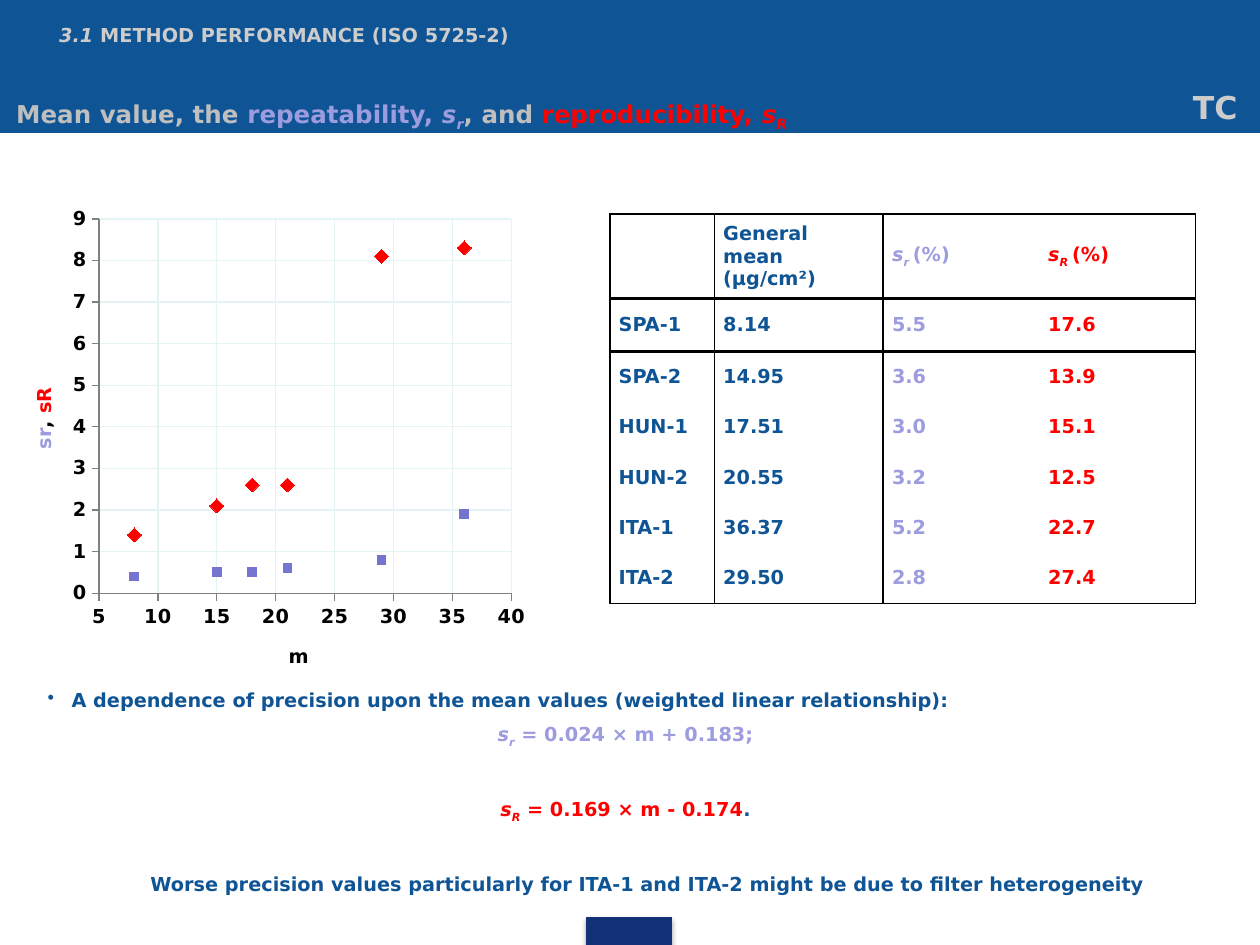
import pptx
import pptx.chart.data
import pptx.dml.color
import pptx.enum.chart
import pptx.enum.shapes
import pptx.enum.text
import pptx.oxml
import pptx.oxml.ns
import pptx.util

RGB = pptx.dml.color.RGBColor
BLUE = RGB(0x0F, 0x54, 0x94)
NAVY = RGB(0x13, 0x31, 0x76)
LILAC = RGB(0x9C, 0x9C, 0xDF)
VIOLET = RGB(0x75, 0x75, 0xD1)
RED = RGB(0xFF, 0, 0)
BLACK = RGB(0, 0, 0)
GRAY = RGB(0x80, 0x80, 0x80)
SILVER = RGB(0xBF, 0xBF, 0xBF)
PALE = RGB(0xCC, 0xCC, 0xCC)
MINT = RGB(0xE4, 0xF3, 0xF4)
FONT = "DejaVu Sans"
Pt = pptx.util.Pt
NS = pptx.oxml.ns.nsdecls
ALIGN = pptx.enum.text.PP_ALIGN
ANCHOR = pptx.enum.text.MSO_ANCHOR
RECT = pptx.enum.shapes.MSO_SHAPE.RECTANGLE

deck = pptx.Presentation()
deck.slide_width = pptx.util.Inches(10)
deck.slide_height = pptx.util.Inches(7.5)
COL = deck.slide_width / 100
ROW = deck.slide_height / 75


def span(col, row, wide, high):
    """Turn a place on the 100 by 75 grid into left, top, width, height."""
    return [round(n * unit) for n, unit in zip((col, row, wide, high), (COL, ROW) * 2)]


def write(par, size, *runs):
    """Fill a paragraph with (text, colour, style); style is "", "i" or "sub"."""
    par.font.name, par.font.size, par.font.bold = FONT, Pt(size), True
    for text, color, style in runs:
        run = par.add_run()
        run.text = text
        font = run.font
        font.name, font.size, font.bold = FONT, Pt(size), True
        font.color.rgb = color
        font.italic = style != ""
        if style == "sub":
            font._element.set("baseline", "-25000")


slide = deck.slides.add_slide(deck.slide_layouts[5])
shapes = slide.shapes

# Header band and footer block
band = shapes.add_shape(RECT, *span(0, 0, 100, 10.5))
foot = shapes.add_shape(RECT, *span(46.6, 72.8, 6.7, 2.2))
for shape, color in ((band, BLUE), (foot, NAVY)):
    shape.fill.solid()
    shape.fill.fore_color.rgb = color
    shape.line.color.rgb = color
    shape.line.width = Pt(0.75)
band.shadow.inherit = False
shapes._spTree.insert(2, band._element)

# Title
title = shapes.title
title.left, title.top, title.width, title.height = span(0, 0, 89.8, 5.6)
frame = title.text_frame
frame.margin_left = round(4.7 * COL)
frame.vertical_anchor = ANCHOR.MIDDLE
frame.paragraphs[0].alignment = ALIGN.LEFT
write(frame.paragraphs[0], 11, ("3.1 ", PALE, "i"),
      ("METHOD PERFORMANCE (ISO 5725-2)", PALE, ""))

# Subtitle bar and tag
bar = shapes.add_shape(RECT, *span(0.3, 6, 89.9, 4.5))
bar.shadow.inherit = False
bar.fill.solid()
bar.fill.fore_color.rgb = BLUE
bar.line.fill.background()
frame = bar.text_frame
frame.word_wrap = True
frame.margin_bottom = 0
frame.vertical_anchor = ANCHOR.BOTTOM
frame.paragraphs[0].alignment = ALIGN.LEFT
write(frame.paragraphs[0], 14, ("Mean value, the ", SILVER, ""),
      ("repeatability, ", LILAC, ""), ("s", LILAC, "i"), ("r", LILAC, "sub"),
      (", and ", SILVER, ""), ("reproducibility, ", RED, ""),
      ("s", RED, "i"), ("R", RED, "sub"))

tag = shapes.add_textbox(*span(93.7, 6.5, 5.6, 4))
tag.text_frame.word_wrap = False
write(tag.text_frame.paragraphs[0], 18, ("TC", PALE, ""))

# Scatter chart
mean = (8, 15, 18, 21, 36, 29)
marks = pptx.enum.chart.XL_MARKER_STYLE
sets = (("Series 1", (1.4, 2.1, 2.6, 2.6, 8.3, 8.1), marks.DIAMOND, 8, RED),
        ("Series 2", (0.4, 0.5, 0.5, 0.6, 1.9, 0.8), marks.SQUARE, 5, VIOLET))
data = pptx.chart.data.XyChartData()
for name, vals, *rest in sets:
    line = data.add_series(name)
    for x, y in zip(mean, vals):
        line.add_data_point(x, y)
chart = shapes.add_chart(pptx.enum.chart.XL_CHART_TYPE.XY_SCATTER,
                         *span(1.8, 16.2, 40.4, 39.1), data).chart
chart.has_title = chart.has_legend = False
chart.font.name, chart.font.size, chart.font.bold = FONT, Pt(11), True
chart.font.color.rgb = BLACK
chart.plots[0].vary_by_categories = False
for line, (name, vals, mark, size, color) in zip(chart.plots[0].series, sets):
    line.smooth = False
    line.format.line.fill.background()
    line.marker.style, line.marker.size = mark, size
    line.marker.format.fill.solid()
    line.marker.format.fill.fore_color.rgb = color
    line.marker.format.line.color.rgb = color
axes = ((chart.category_axis, 5, 40, 5, [("m", BLACK, "")]),
        (chart.value_axis, 0, 9, 1,
         [("sr", LILAC, ""), (", ", BLACK, ""), ("sR", RED, "")]))
for axis, low, high, step, label in axes:
    axis.minimum_scale, axis.maximum_scale, axis.major_unit = low, high, step
    axis.major_tick_mark = pptx.enum.chart.XL_TICK_MARK.OUTSIDE
    axis.minor_tick_mark = pptx.enum.chart.XL_TICK_MARK.NONE
    axis.tick_labels.number_format = "0"
    axis.tick_labels.number_format_is_linked = False
    axis.format.line.color.rgb = GRAY
    axis.has_major_gridlines = True
    axis.major_gridlines.format.line.color.rgb = MINT
    axis.major_gridlines.format.line.width = Pt(0.75)
    write(axis.axis_title.text_frame.paragraphs[0], 11, *label)
area = chart._chartSpace.chart.plotArea
for old in area.xpath("c:layout"):
    area.remove(old)
parts = "".join(f'<c:{key} val="{val}"/>' for key, val in (
    ("layoutTarget", "inner"), ("xMode", "edge"), ("yMode", "edge"),
    ("x", 0.15), ("y", 0.03), ("w", 0.81), ("h", 0.76)))
area.insert(0, pptx.oxml.parse_xml(
    f'<c:layout {NS("c")}><c:manualLayout>{parts}</c:manualLayout></c:layout>'))

# Precision table
head = ([], [("General mean (µg/cm²)", BLUE, "")],
        [("s", LILAC, "i"), ("r ", LILAC, "sub"), ("(%)", LILAC, "")],
        [("s", RED, "i"), ("R ", RED, "sub"), ("(%)", RED, "")])
body = (("SPA-1", "8.14", "5.5", "17.6"), ("SPA-2", "14.95", "3.6", "13.9"),
        ("HUN-1", "17.51", "3.0", "15.1"), ("HUN-2", "20.55", "3.2", "12.5"),
        ("ITA-1", "36.37", "5.2", "22.7"), ("ITA-2", "29.50", "2.8", "27.4"))
inks = (BLUE, BLUE, LILAC, RED)
rows = [head] + [[[(text, ink, "")] for text, ink in zip(row, inks)] for row in body]
table = shapes.add_table(7, 4, *span(48.4, 17, 46.5, 30.7)).table
table.first_row = table.horz_banding = False
table._tbl.tblPr.xpath("a:tableStyleId")[0].text = "{2D5ABB26-0587-4C30-8999-92F81FD0307C}"
for col, wide in zip(table.columns, (8.3, 13.4, 12.4, 12.4)):
    col.width = round(wide * COL)
for row, high in zip(table.rows, [6.7, 4.2] + [4] * 5):
    row.height = round(high * ROW)
for r, row in enumerate(rows):
    for c, runs in enumerate(row):
        cell = table.cell(r, c)
        cell.vertical_anchor = ANCHOR.MIDDLE
        cell.margin_left = cell.margin_right = round(0.7 * COL)
        cell.margin_top = cell.margin_bottom = 0
        cell.text_frame.paragraphs[0].alignment = ALIGN.JUSTIFY
        write(cell.text_frame.paragraphs[0], 11, *runs)
        edges = {"L": 1 if c < 2 else 0, "R": 1 if c in (0, 3) else 0,
                 "T": {0: 1, 1: 2.25}.get(r, 0), "B": {0: 2.25, 6: 1}.get(r, 0)}
        for side, thick in edges.items():
            if thick:
                cell._tc.get_or_add_tcPr().append(pptx.oxml.parse_xml(
                    f'<a:ln{side} {NS("a")} w="{Pt(thick)}"><a:solidFill>'
                    f'<a:srgbClr val="{BLACK}"/></a:solidFill></a:ln{side}>'))
        cell.fill.background()

# Fitted relations
note = shapes.add_textbox(*span(2.8, 53, 93.7, 13.3)).text_frame
note.word_wrap = True
lines = ([("A dependence of precision upon the mean values (weighted linear relationship):",
           BLUE, "")],
         [("s", LILAC, "i"), ("r", LILAC, "sub"), (" = 0.024 × m + 0.183;", LILAC, "")],
         [("s", RED, "i"), ("R", RED, "sub"), (" = 0.169 × m - 0.174", RED, ""),
          (".", BLUE, "")])
for i, runs in enumerate(lines):
    par = note.paragraphs[0] if i == 0 else note.add_paragraph()
    par.line_spacing = Pt(21.4)
    if i == 0:
        props = par._p.get_or_add_pPr()
        props.set("marL", str(round(1.9 * COL)))
        props.set("indent", str(round(-1.9 * COL)))
        props.append(pptx.oxml.parse_xml(f'<a:buChar {NS("a")} char="•"/>'))
    else:
        par.alignment = ALIGN.CENTER
    if i == 2:
        par.space_before = Pt(21.4)
    write(par, 11, *runs)

# Closing remark
last = shapes.add_textbox(*span(0, 66.6, 100, 7.1)).text_frame
last.word_wrap = True
last.margin_left = round(3.8 * COL)
last.vertical_anchor = ANCHOR.MIDDLE
last.paragraphs[0].alignment = ALIGN.CENTER
write(last.paragraphs[0], 11,
      ("Worse precision values particularly for ITA-1 and ITA-2 might be due to "
       "filter heterogeneity", BLUE, ""))

deck.save("out.pptx")
